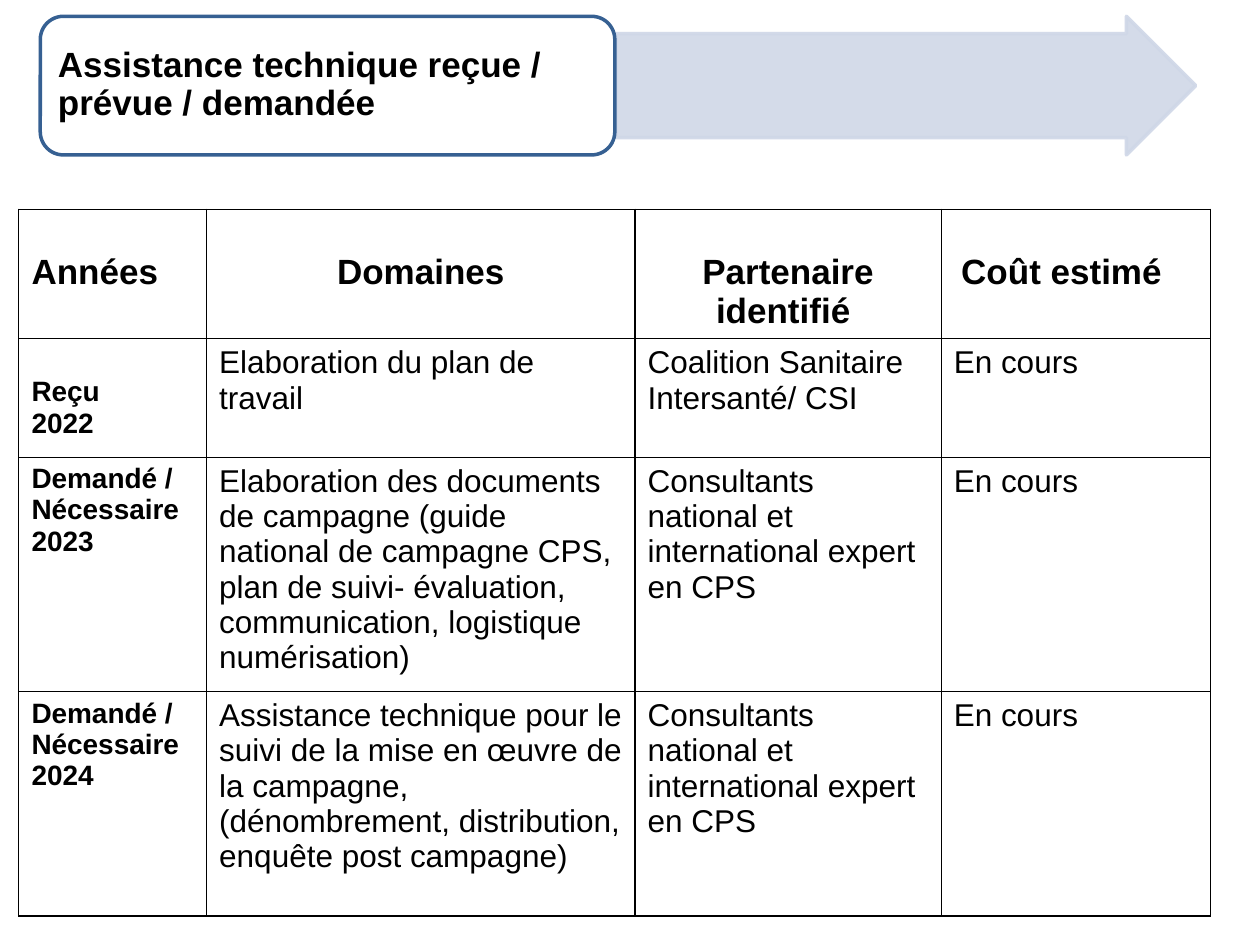
from lxml.etree import SubElement
from pptx import Presentation
from pptx.dml.color import RGBColor
from pptx.enum.shapes import MSO_SHAPE as Shape
from pptx.enum.text import MSO_ANCHOR as Anchor, PP_ALIGN as Align
from pptx.oxml import parse_xml
from pptx.oxml.ns import nsdecls, qn
from pptx.util import Inches, Pt

BLACK = RGBColor(0x00, 0x00, 0x00)
WHITE = RGBColor(0xFF, 0xFF, 0xFF)
BLUE = RGBColor(0x36, 0x60, 0x92)
PALE_BLUE = RGBColor(0xCF, 0xD7, 0xE7)


def add_text(para, text, size, bold):
    span = para.add_run()
    span.text = text
    span.font.name = "Arial"
    span.font.size = Pt(size)
    span.font.bold = bold
    span.font.color.rgb = BLACK


def add_outlined(kind, left, width, fill, line):
    shape = page.shapes.add_shape(kind, Inches(left), Inches(0.13), Inches(width), Inches(1.1))
    shape.shadow.inherit = False
    shape.fill.solid()
    shape.fill.fore_color.rgb = fill
    shape.line.color.rgb = line
    shape.line.width = Pt(2)
    return shape


deck = Presentation()
deck.slide_width = Inches(10)
deck.slide_height = Inches(7.5)
page = deck.slides.add_slide(deck.slide_layouts[6])

arrow = add_outlined(Shape.RIGHT_ARROW, 4.89, 4.6, PALE_BLUE, PALE_BLUE)
arrow.adjustments[0] = 0.75
arrow.adjustments[1] = 0.5
for color in arrow._element.spPr.iter(qn("a:srgbClr")):
    SubElement(color, qn("a:alpha"), val="89000")

add_outlined(Shape.ROUNDED_RECTANGLE, 0.32, 4.56, WHITE, BLUE)

title_box = page.shapes.add_textbox(Inches(0.38), Inches(0.18), Inches(4.45), Inches(0.99))
title = title_box.text_frame
title.word_wrap = True
title.vertical_anchor = Anchor.MIDDLE
title.margin_left = title.margin_right = Inches(0.08)
title.margin_top = title.margin_bottom = Inches(0.04)
title.paragraphs[0].line_spacing = 0.9
add_text(title.paragraphs[0], "Assistance technique reçue / prévue / demandée", 20, True)

COLUMN_WIDTHS = [1.49, 3.4, 2.43, 2.14]
ROW_HEIGHTS = [1.03, 0.94, 1.78, 1.78]
EXPERTS = "Consultants national et international expert en CPS"
ROWS = [
    ["Années", "Domaines", "Partenaire identifié ", "Coût estimé"],
    ["Reçu\n2022", "Elaboration du plan de travail",
     "Coalition Sanitaire Intersanté/ CSI", "En cours"],
    ["Demandé / Nécessaire\n2023",
     "Elaboration des documents de campagne (guide national de campagne CPS, "
     "plan de suivi- évaluation, communication, logistique numérisation)",
     EXPERTS, "En cours"],
    ["Demandé / Nécessaire\n2024",
     "Assistance technique pour le suivi de la mise en œuvre de la campagne, "
     "(dénombrement, distribution, enquête post campagne)",
     EXPERTS, "En cours"],
]

frame = page.shapes.add_table(len(ROWS), len(COLUMN_WIDTHS), Inches(0.15), Inches(1.66),
                              Inches(sum(COLUMN_WIDTHS)), Inches(sum(ROW_HEIGHTS)))
table = frame.table
table.first_row = False
table.horz_banding = False
for column, width in zip(table.columns, COLUMN_WIDTHS):
    column.width = Inches(width)
for row, height in zip(table.rows, ROW_HEIGHTS):
    row.height = Inches(height)

for row_index, texts in enumerate(ROWS):
    for column_index, text in enumerate(texts):
        cell = table.cell(row_index, column_index)
        is_header = row_index == 0
        is_label = column_index == 0
        size = 20 if is_header else 16 if is_label else 18
        cell.margin_left = cell.margin_right = Inches(0.1)
        cell.margin_top = Inches(0.05)
        cell.margin_bottom = Inches(0.01)
        cell.fill.background()
        properties = cell._tc.get_or_add_tcPr()
        for position, side in enumerate(["lnL", "lnR", "lnT", "lnB"]):
            border = parse_xml(
                f'<a:{side} {nsdecls("a")} w="9525"><a:solidFill>'
                f'<a:srgbClr val="{BLACK}"/></a:solidFill></a:{side}>')
            properties.insert(position, border)
        for line_index, line in enumerate(text.split("\n")):
            para = cell.text_frame.paragraphs[0] if line_index == 0 else cell.text_frame.add_paragraph()
            if is_header and not is_label:
                para.alignment = Align.CENTER
            add_text(para, line, size, is_header or is_label)

for cell in table.rows[0].cells:
    cell.margin_top = Inches(0.35)
table.cell(0, 3).margin_right = Inches(0.33)
table.cell(1, 0).margin_top = Inches(0.3)

deck.save("out.pptx")
